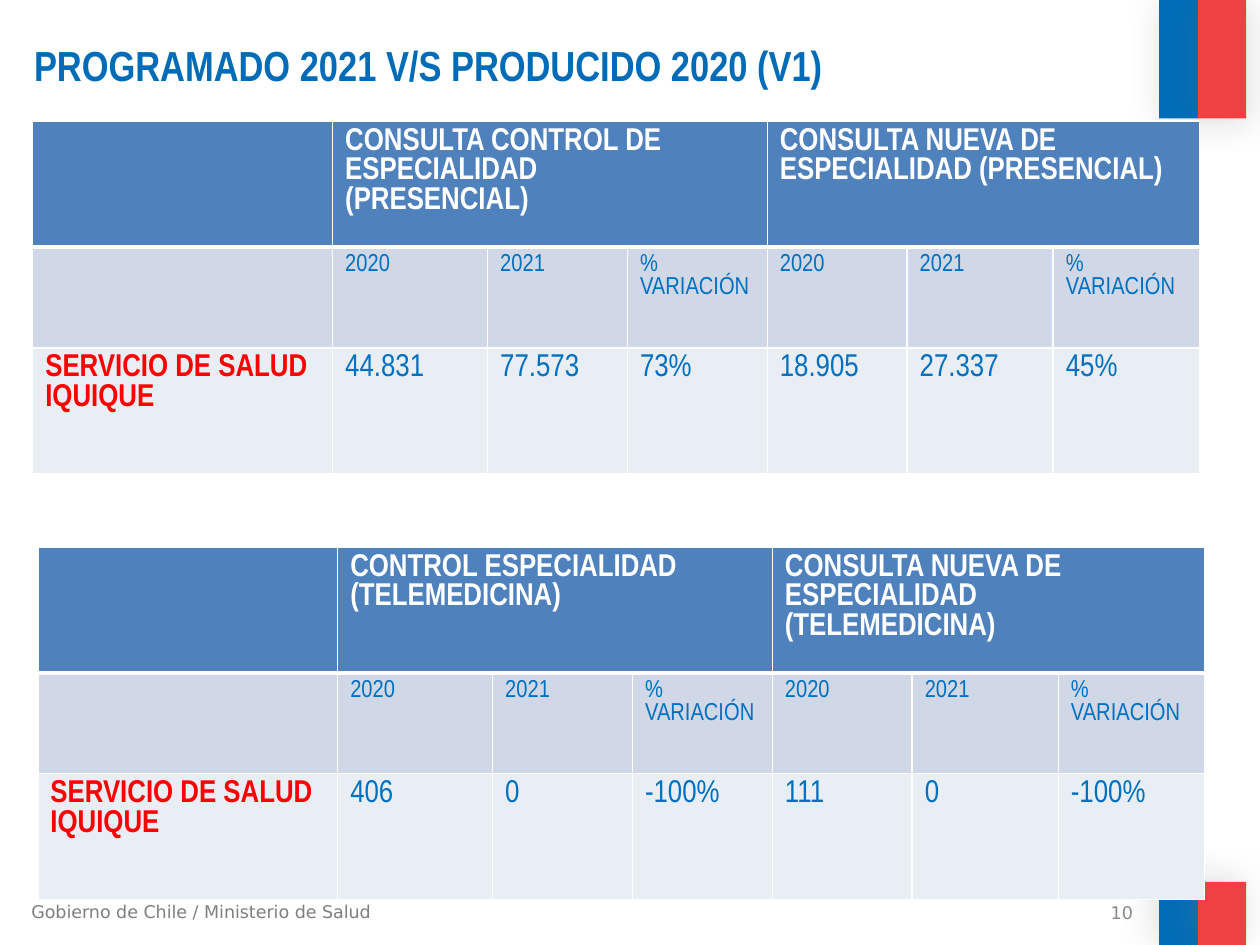
from dataclasses import dataclass

from lxml.etree import SubElement
from pptx import Presentation
from pptx.dml.color import RGBColor
from pptx.enum.shapes import MSO_SHAPE
from pptx.enum.text import MSO_ANCHOR, PP_ALIGN
from pptx.oxml.ns import qn
from pptx.util import Inches, Pt


@dataclass(frozen=True)
class Theme:
    blue: str = "006CB7"
    red: str = "EF4144"
    shadow: str = "808080"
    footer: str = "7F7F7F"
    number: str = "898989"
    white: str = "FFFFFF"
    value: str = "0070C0"
    service: str = "FF0000"
    bands: tuple = ("4F81BD", "D0D8E8", "E9EDF4")
    font: str = "Arial Narrow"
    footer_font: str = "DejaVu Sans"
    title_size: int = 24
    large: int = 18
    medium: int = 14
    small: int = 10


THEME = Theme()
TITLE = "PROGRAMADO 2021 V/S PRODUCIDO 2020 (V1)"
FOOTER = "Gobierno de Chile / Ministerio de Salud"
PAGE = "10"
YEARS = ["2020", "2021", "% VARIACIÓN"]
SERVICE = "SERVICIO DE SALUD IQUIQUE"
COMPARISONS = [
    {
        "corner": (0.26, 0.96),
        "groups": ["CONSULTA CONTROL DE ESPECIALIDAD\n(PRESENCIAL)",
                   "CONSULTA NUEVA DE ESPECIALIDAD (PRESENCIAL)"],
        "values": ["44.831", "77.573", "73%", "18.905", "27.337", "45%"],
    },
    {
        "corner": (0.3, 4.34),
        "groups": ["CONTROL ESPECIALIDAD\n(TELEMEDICINA)",
                   "CONSULTA NUEVA DE ESPECIALIDAD (TELEMEDICINA)"],
        "values": ["406", "0", "-100%", "111", "0", "-100%"],
    },
]
COLUMNS = [2.38, 1.23, 1.11, 1.11, 1.11, 1.16, 1.16]
ROWS = [1, 0.8, 1]
FLAG_COLUMNS = [(9.2, 0.31, THEME.blue), (9.51, 0.38, THEME.red)]
FLAG_ROWS = [(0, 0.94, 45), (7, 0.5, 215)]


def color(code):
    return RGBColor.from_string(code)


def format_text(frame, size, code, font=THEME.font, bold=False):
    for paragraph in frame.paragraphs:
        for run in paragraph.runs:
            run.font.size = Pt(size)
            run.font.name = font
            run.font.bold = bold
            run.font.color.rgb = color(code)


def add_shadow(shape, angle):
    shape.shadow.inherit = False
    effects = shape.element.spPr.find(qn("a:effectLst"))
    outer = SubElement(effects, qn("a:outerShdw"), blurRad=str(Pt(20)),
                       dist=str(Pt(3)), dir=str(angle * 60000), rotWithShape="0")
    tint = SubElement(outer, qn("a:srgbClr"), val=THEME.shadow)
    SubElement(tint, qn("a:alpha"), val="25000")


def add_flags(slide):
    for top, height, angle in FLAG_ROWS:
        for left, width, code in FLAG_COLUMNS:
            flag = slide.shapes.add_shape(
                MSO_SHAPE.RECTANGLE, *map(Inches, (left, top, width, height)))
            flag.fill.solid()
            flag.fill.fore_color.rgb = color(code)
            flag.line.fill.background()
            add_shadow(flag, angle)


def add_title(slide):
    title = slide.shapes.title
    title.left, title.top, title.width, title.height = map(
        Inches, (0.17, 0.17, 9.24, 0.67))
    frame = title.text_frame
    frame.text = TITLE
    frame.vertical_anchor = MSO_ANCHOR.TOP
    frame.margin_top = Inches(0.14)
    frame.paragraphs[0].alignment = PP_ALIGN.LEFT
    format_text(frame, THEME.title_size, THEME.blue, bold=True)


def add_small_text(slide, box, text, code, alignment):
    frame = slide.shapes.add_textbox(*map(Inches, box)).text_frame
    frame.word_wrap = True
    frame.vertical_anchor = MSO_ANCHOR.MIDDLE
    frame.text = text
    frame.paragraphs[0].alignment = alignment
    format_text(frame, THEME.small, code, THEME.footer_font)


def style_cell(cell, row):
    properties = cell._tc.get_or_add_tcPr()
    for side in ("L", "R", "T", "B"):
        heavy = (row == 0 and side == "B") or (row == 1 and side == "T")
        border = SubElement(properties, qn(f"a:ln{side}"), w=str(Pt(3 if heavy else 1)))
        line_fill = SubElement(border, qn("a:solidFill"))
        SubElement(line_fill, qn("a:srgbClr"), val=THEME.white)
    cell.fill.solid()
    cell.fill.fore_color.rgb = color(THEME.bands[row])


def add_comparison(slide, corner, groups, values):
    extent = (sum(COLUMNS), sum(ROWS))
    table = slide.shapes.add_table(
        len(ROWS), len(COLUMNS), *map(Inches, corner + extent)).table
    for column, width in zip(table.columns, COLUMNS):
        column.width = Inches(width)
    for row, height in zip(table.rows, ROWS):
        row.height = Inches(height)

    span = len(YEARS)
    header = [""]
    for group in groups:
        header += [group] + [""] * (span - 1)
    content = [header, [""] + YEARS * len(groups), [SERVICE] + values]
    styles = [(THEME.large, THEME.white, True),
              (THEME.medium, THEME.value, False),
              (THEME.large, THEME.value, False)]
    for r, texts in enumerate(content):
        for c, text in enumerate(texts):
            cell = table.cell(r, c)
            style_cell(cell, r)
            cell.text_frame.text = text
            size, code, bold = styles[r]
            if text == SERVICE:
                code, bold = THEME.service, True
            format_text(cell.text_frame, size, code, bold=bold)
    for start in range(1, len(COLUMNS), span):
        table.cell(0, start).merge(table.cell(0, start + span - 1))


def main():
    presentation = Presentation()
    presentation.slide_width = Inches(10)
    presentation.slide_height = Inches(7.5)
    slide = presentation.slides.add_slide(presentation.slide_layouts[5])
    add_flags(slide)
    add_small_text(slide, (0.15, 7.1, 3.02, 0.27), FOOTER, THEME.footer, PP_ALIGN.LEFT)
    add_title(slide)
    add_small_text(slide, (6.76, 7.14, 2.33, 0.21), PAGE, THEME.number, PP_ALIGN.RIGHT)
    for comparison in COMPARISONS:
        add_comparison(slide, **comparison)
    presentation.save("out.pptx")


if __name__ == "__main__":
    main()
